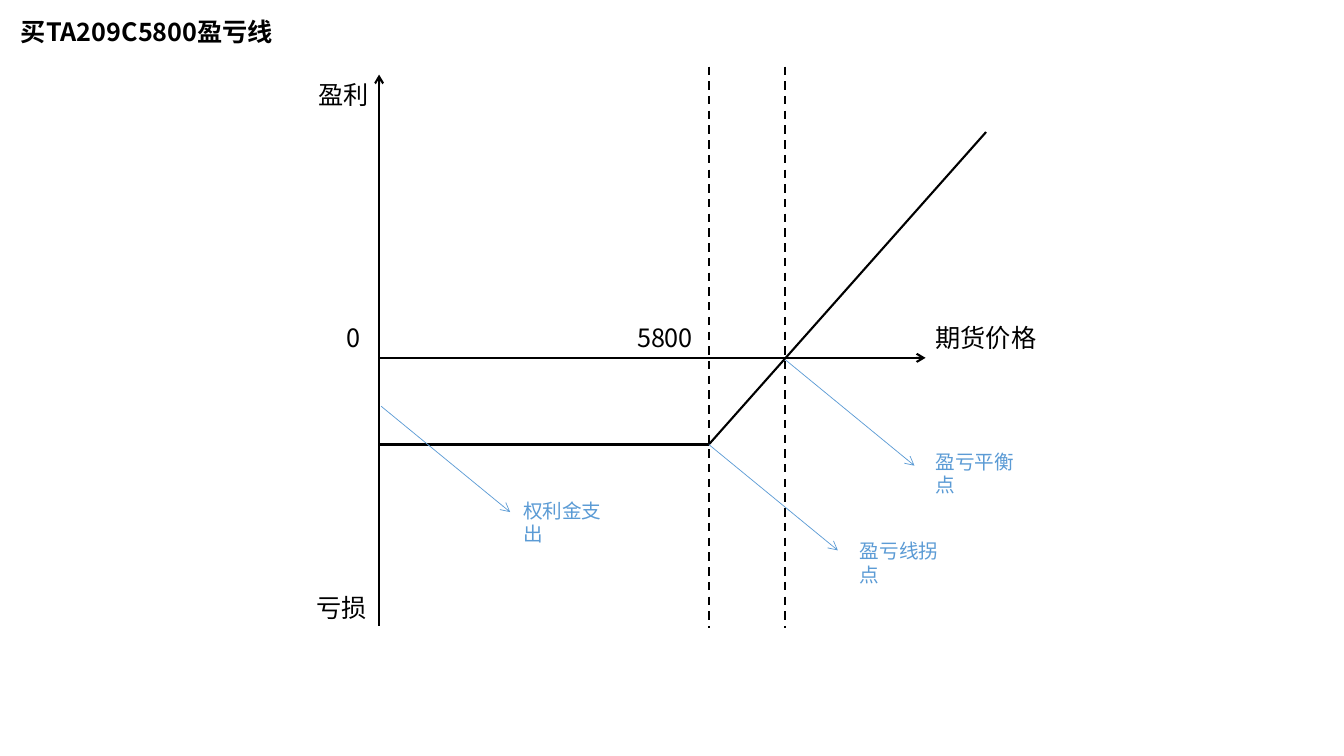
from lxml.etree import SubElement
from pptx import Presentation
from pptx.dml.color import RGBColor
from pptx.enum.dml import MSO_LINE
from pptx.enum.shapes import MSO_CONNECTOR
from pptx.enum.text import MSO_AUTO_SIZE
from pptx.oxml.ns import qn
from pptx.util import Inches, Pt

COLORS = {"ink": "000000", "note": "5B9BD5"}


class PayoffSlide:
    font = "Noto Sans CJK SC"

    def __init__(self, deck):
        self.slide = deck.slides.add_slide(deck.slide_layouts[6])

    def line(self, start, end, color="ink", weight=1.5, dashed=False, arrow=False):
        ends = [Inches(value) for value in (*start, *end)]
        stroke = self.slide.shapes.add_connector(MSO_CONNECTOR.STRAIGHT, *ends)
        stroke.line.color.rgb = RGBColor.from_string(COLORS[color])
        stroke.line.width = Pt(weight)
        if dashed:
            stroke.line.dash_style = MSO_LINE.DASH
        properties = stroke._element.spPr
        if arrow:
            SubElement(properties.find(qn("a:ln")), qn("a:tailEnd"), type="arrow")
        SubElement(properties, qn("a:effectLst"))

    def label(self, text, left, top, width, height=0.4, size=18,
              color="ink", bold=False, wrap=False):
        box = self.slide.shapes.add_textbox(
            Inches(left), Inches(top), Inches(width), Inches(height))
        frame = box.text_frame
        frame.text = text
        frame.word_wrap = wrap
        frame.auto_size = MSO_AUTO_SIZE.SHAPE_TO_FIT_TEXT
        font = frame.paragraphs[0].runs[0].font
        font.size = Pt(size)
        font.bold = bold
        font.color.rgb = RGBColor.from_string(COLORS[color])
        font.name = self.font
        SubElement(font._element, qn("a:ea"), typeface=self.font)

    def callout(self, text, x, y, left, top):
        self.line((x, y), (x + 1.28, y + 1.05), "note", 0.5, arrow=True)
        self.label(text, left, top, 1.17, 0.34, 14, "note")


def main():
    deck = Presentation()
    deck.slide_width, deck.slide_height = Inches(13.33), Inches(7.5)
    payoff = PayoffSlide(deck)

    axis_x, zero_y = 3.76, 3.55
    strike_x, break_even_x, loss_y = 7.03, 7.79, 4.41

    payoff.line((axis_x, 6.21), (axis_x, 0.74), arrow=True)
    payoff.line((axis_x, zero_y), (9.18, zero_y), arrow=True)
    payoff.label("盈利", 3.06, 0.74, 0.7)
    payoff.label("亏损", 3.04, 5.83, 0.7)
    payoff.label("期货价格", 9.18, 3.15, 1.2)

    payoff.line((axis_x, loss_y), (strike_x, loss_y))
    payoff.line((strike_x, loss_y), (9.78, 1.31))
    for price_x in (strike_x, break_even_x):
        payoff.line((price_x, 0.66), (price_x, 6.23), dashed=True)

    payoff.label("0", 3.34, 3.15, 0.4, wrap=True)
    payoff.label("5800", 6.22, 3.15, 2.31, wrap=True)
    payoff.label("买TA209C5800盈亏线", 0.11, 0.11, 3.76, bold=True, wrap=True)

    payoff.callout("权利金支出", 3.78, 4.03, 5.09, 4.9)
    payoff.callout("盈亏线拐点", strike_x, loss_y, 8.43, 5.3)
    payoff.callout("盈亏平衡点", break_even_x, 3.57, 9.18, 4.41)

    deck.save("out.pptx")


if __name__ == "__main__":
    main()
